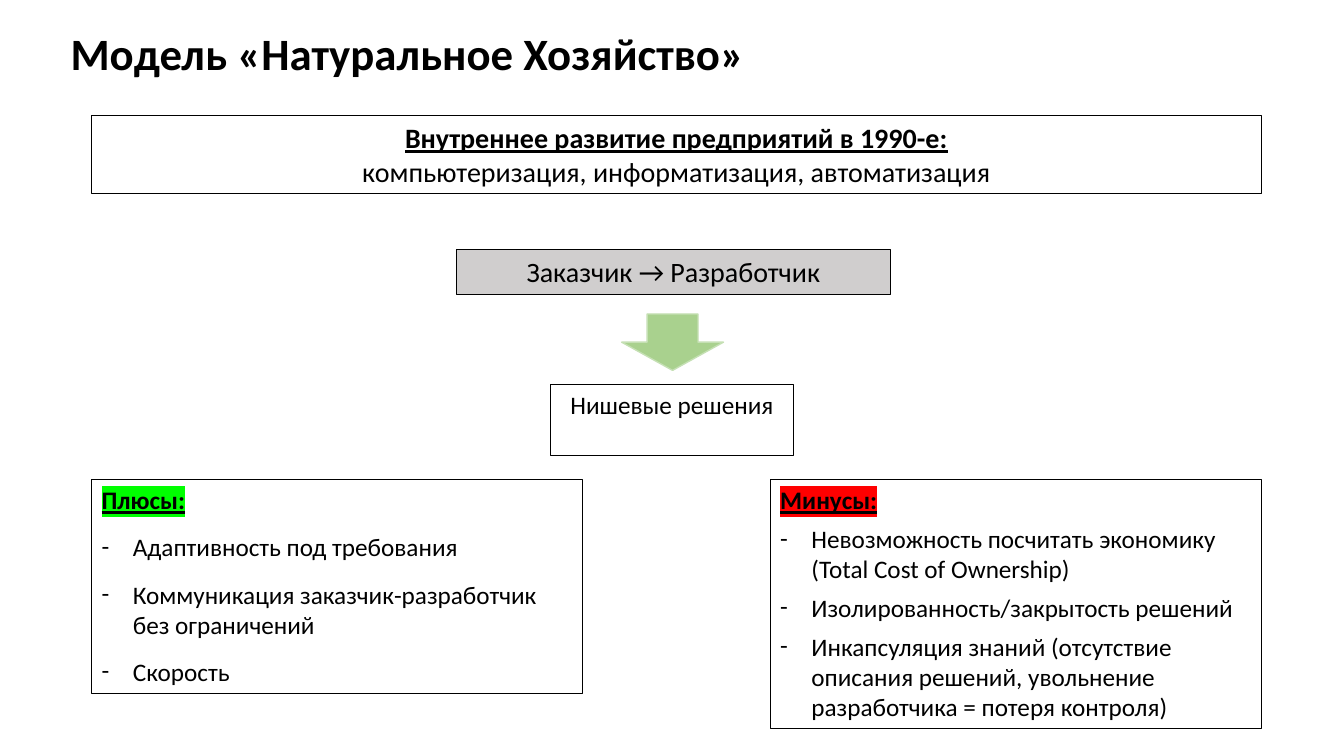
from lxml import etree
from pptx import Presentation
from pptx.dml.color import RGBColor
from pptx.enum.shapes import MSO_SHAPE
from pptx.enum.text import MSO_ANCHOR, MSO_AUTO_SIZE, PP_ALIGN
from pptx.oxml.ns import qn
from pptx.util import Inches, Pt

BLACK = RGBColor(0x00, 0x00, 0x00)
GREY = RGBColor(0xD0, 0xCE, 0xCE)
GREEN = RGBColor(0xA9, 0xD1, 0x8E)
PALE_GREEN = RGBColor(0xC5, 0xE0, 0xB4)
LIME = RGBColor(0x00, 0xFF, 0x00)
RED = RGBColor(0xFF, 0x00, 0x00)
FONT = "Calibri"
RECTANGLE, RIGHT_ARROW = MSO_SHAPE.RECTANGLE, MSO_SHAPE.RIGHT_ARROW
LEFT, CENTER = PP_ALIGN.LEFT, PP_ALIGN.CENTER
TOP, MIDDLE = MSO_ANCHOR.TOP, MSO_ANCHOR.MIDDLE
NO_FIT, GROW = MSO_AUTO_SIZE.NONE, MSO_AUTO_SIZE.SHAPE_TO_FIT_TEXT

deck = Presentation()
deck.slide_width, deck.slide_height = Inches(13.33), Inches(7.5)
page = deck.slides.add_slide(deck.slide_layouts[5])


def add_box(left, top, width, height, fit=GROW):
    """Add an outlined rectangle and return it."""
    box = page.shapes.add_shape(RECTANGLE, Inches(left), Inches(top), Inches(width), Inches(height))
    box.shadow.inherit = False
    box.fill.background()
    box.line.color.rgb = BLACK
    box.line.width = Pt(0.75)
    frame = box.text_frame
    frame.word_wrap = True
    frame.auto_size = fit
    frame.vertical_anchor = TOP
    return box


def write(para, text, size, align=LEFT, heading=False, before=0):
    """Fill a paragraph with one formatted run and return the run."""
    para.alignment = align
    para.space_before = Pt(before)
    span = para.add_run()
    span.text = text
    span.font.name = FONT
    span.font.size = Pt(size)
    span.font.bold = heading
    span.font.underline = heading
    span.font.color.rgb = BLACK
    return span


# Title
title = page.shapes.title
title.left, title.top, title.width, title.height = Inches(0.6), Inches(0.19), Inches(11.5), Inches(0.73)
title.text_frame.word_wrap = True
title.text_frame.auto_size = NO_FIT
title.text_frame.vertical_anchor = MIDDLE
title_para = title.text_frame.paragraphs[0]
title_para.line_spacing = 0.9
title_span = write(title_para, "Модель «Натуральное Хозяйство»", 32, heading=True)
title_span.font.underline = False

# Context banner
banner = add_box(0.91, 1.15, 11.6, 0.77).text_frame
write(banner.paragraphs[0], "Внутреннее развитие предприятий в 1990-е:", 20, CENTER, heading=True)
write(banner.add_paragraph(), "компьютеризация, информатизация, автоматизация", 20, CENTER)

# Customer to developer, leading to niche solutions
customer = add_box(4.53, 2.48, 4.3, 0.44)
customer.fill.solid()
customer.fill.fore_color.rgb = GREY
write(customer.text_frame.paragraphs[0], "Заказчик → Разработчик", 20, CENTER, before=12)

arrow = page.shapes.add_shape(RIGHT_ARROW, Inches(6.39), Inches(2.89), Inches(0.56), Inches(1.01))
arrow.rotation = 90
arrow.shadow.inherit = False
arrow.fill.solid()
arrow.fill.fore_color.rgb = GREEN
arrow.line.color.rgb = PALE_GREEN
arrow.line.width = Pt(1)

niche = add_box(5.46, 3.81, 2.41, 0.71, fit=NO_FIT)
write(niche.text_frame.paragraphs[0], "Нишевые решения", 18, CENTER)

# Pros and cons: left, height, gap before paragraphs, highlight, heading, points
columns = [
    (0.91, 2.12, 12, LIME, "Плюсы:", [
        "Адаптивность под требования",
        "Коммуникация заказчик-разработчик без ограничений",
        "Скорость",
    ]),
    (7.64, 2.47, 6, RED, "Минусы:", [
        "Невозможность посчитать экономику (Total Cost of Ownership)",
        "Изолированность/закрытость решений",
        "Инкапсуляция знаний (отсутствие описания решений, увольнение разработчика = потеря контроля)",
    ]),
]
for left, height, gap, marker, heading, points in columns:
    frame = add_box(left, 4.76, 4.87, height).text_frame
    span = write(frame.paragraphs[0], heading, 18, heading=True, before=gap)
    highlight = etree.Element(qn("a:highlight"))
    etree.SubElement(highlight, qn("a:srgbClr"), val=str(marker))
    span.font._element.find(qn("a:solidFill")).addnext(highlight)
    for point in points:
        para = frame.add_paragraph()
        write(para, point, 18, before=gap)
        props = para._p.get_or_add_pPr()
        props.set("marL", str(Inches(0.31)))
        props.set("indent", str(-Inches(0.31)))
        etree.SubElement(props, qn("a:buFont"), typeface=FONT)
        etree.SubElement(props, qn("a:buChar"), char="-")

deck.save("out.pptx")
